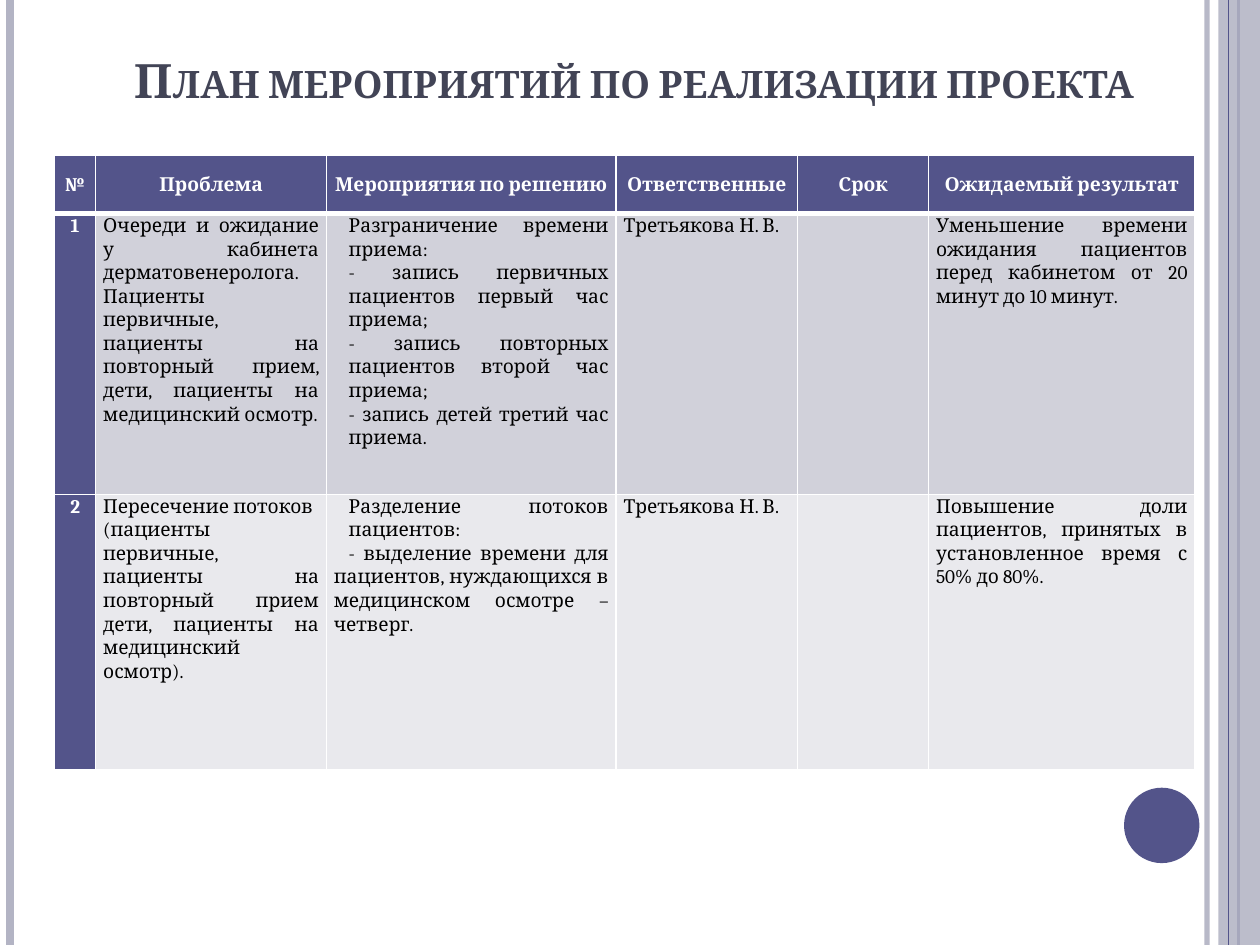
import pptx
import pptx.util
import pptx.dml.color
import pptx.enum.shapes
import pptx.enum.text
import pptx.oxml
import pptx.oxml.ns
import lxml.etree

Cm = pptx.util.Cm
Pt = pptx.util.Pt
RGB = pptx.dml.color.RGBColor
ALIGN = pptx.enum.text.PP_ALIGN
ANCHOR = pptx.enum.text.MSO_ANCHOR
FORM = pptx.enum.shapes.MSO_SHAPE
qn = pptx.oxml.ns.qn

INDIGO = RGB(0x53, 0x54, 0x8A)
LILAC = RGB(0xB3, 0xB4, 0xC4)
SLATE = RGB(0x42, 0x44, 0x56)
BAND = RGB(0xD1, 0xD1, 0xDA)
PALE = RGB(0xE9, 0xE9, 0xED)
WHITE = RGB(0xFF, 0xFF, 0xFF)
BLACK = RGB(0, 0, 0)

WIDE, HIGH = 25.4, 19.05
COLS = [0.83, 4.65, 5.84, 3.66, 2.64, 5.37]
ROWS = [1.19, 5.66, 5.54]
INSET = 0.3

HEAD = ["№", "Проблема", "Мероприятия по решению", "Ответственные",
        "Срок", "Ожидаемый результат"]
# Each body cell is a list of (text, left indent, first-line indent)
BODY = [
    [[("1", 0, 0)],
     [("Очереди и ожидание у кабинета дерматовенеролога.", 0, 0),
      ("Пациенты первичные, пациенты на повторный прием, дети, "
       "пациенты на медицинский осмотр.", 0, 0)],
     [("Разграничение времени приема:", INSET, 0),
      ("- запись первичных пациентов первый час приема;", INSET, 0),
      ("- запись повторных пациентов второй час приема;", INSET, 0),
      ("- запись детей третий час приема.", INSET, 0)],
     [("Третьякова Н. В.", 0, 0)],
     [],
     [("Уменьшение времени ожидания пациентов перед кабинетом "
       "от 20 минут до 10 минут.", 0, 0)]],
    [[("2", 0, 0)],
     [("Пересечение потоков", 0, 0),
      ("(пациенты первичные, пациенты на повторный прием дети, "
       "пациенты на медицинский осмотр).", 0, 0)],
     [("Разделение потоков пациентов:", INSET, 0),
      ("- выделение времени для пациентов, нуждающихся в "
       "медицинском осмотре – четверг.", 0, INSET)],
     [("Третьякова Н. В.", 0, 0)],
     [],
     [("Повышение доли пациентов, принятых в установленное время "
       "с 50% до 80%.", 0, 0)]],
]


def format(item, values):
    for name, value in values.items():
        setattr(item, name, value)


def fade(item, share):
    for tint in item._element.spPr.iter(qn("a:srgbClr")):
        alpha = lxml.etree.SubElement(tint, qn("a:alpha"))
        alpha.set("val", str(share * 1000))


def rule(slide, x, top, high, color, width):
    line = slide.shapes.add_connector(
        pptx.enum.shapes.MSO_CONNECTOR.STRAIGHT,
        Cm(x), Cm(top), Cm(x), Cm(top + high))
    line.line.width = Pt(width)
    line.line.color.rgb = color
    lxml.etree.SubElement(line._element.spPr, qn("a:effectLst"))
    return line


def block(slide, form, box, color):
    shape = slide.shapes.add_shape(form, *map(Cm, box))
    shape.shadow.inherit = False
    shape.fill.solid()
    shape.fill.fore_color.rgb = color
    shape.line.fill.background()
    return shape


def add_frame(slide, box):
    left, top, wide, high = box
    right = left + wide
    # Rules beside the content
    fade(rule(slide, right - 1.07, top, high, LILAC, 3), 93)
    rule(slide, left + 0.2, top, high, LILAC, 4.5)
    # Right strip, veiling one rule and crossed by another
    rule(slide, right - 0.43, top, high, INDIGO, 1.5)
    strip = block(slide, FORM.RECTANGLE, (right - 0.84, top, 0.84, high), LILAC)
    fade(strip, 87)
    rule(slide, right - 0.64, top, high, INDIGO, 0.75)
    # Corner disc
    block(slide, FORM.OVAL, (right - 2.74, top + 15.88, 1.52, 1.52), INDIGO)


def add_title(slide, box):
    title = slide.shapes.title
    format(title, dict(zip(("left", "top", "width", "height"), map(Cm, box))))
    frame = title.text_frame
    format(frame, {"vertical_anchor": ANCHOR.BOTTOM, "word_wrap": True,
                   "auto_size": pptx.enum.text.MSO_AUTO_SIZE.NONE})
    para = frame.paragraphs[0]
    para.alignment = ALIGN.CENTER
    run = para.add_run()
    run.text = "План мероприятий по реализации проекта"
    format(run.font, {"name": "Cambria", "size": Pt(27), "bold": True})
    run.font.color.rgb = SLATE
    run.font._element.set("cap", "small")


def add_edge(cell, side, width):
    line = lxml.etree.SubElement(cell._tc.get_or_add_tcPr(), qn("a:ln" + side))
    line.set("w", str(Pt(width)))
    fill = lxml.etree.SubElement(line, qn("a:solidFill"))
    lxml.etree.SubElement(fill, qn("a:srgbClr")).set("val", str(WHITE))


def fill_cell(cell, paras, fill, strong, edges):
    format(cell, {"margin_left": Cm(0.15), "margin_right": Cm(0.15),
                  "margin_top": 0, "margin_bottom": 0})
    for side, width in edges.items():
        add_edge(cell, side, width)
    cell.fill.solid()
    cell.fill.fore_color.rgb = fill
    frame = cell.text_frame
    for k, (text, indent, first) in enumerate(paras):
        para = frame.paragraphs[0] if k == 0 else frame.add_paragraph()
        format(para, {"alignment": ALIGN.CENTER if strong else ALIGN.JUSTIFY,
                      "line_spacing": 1.06})
        if indent or first:
            props = para._p.get_or_add_pPr()
            props.set("marL", str(Cm(indent)))
            props.set("indent", str(Cm(first)))
        run = para.add_run()
        run.text = text
        format(run.font, {"name": "Cambria", "size": Pt(11), "bold": strong})
        run.font.color.rgb = WHITE if strong else BLACK


def add_plan(slide, box):
    table = slide.shapes.add_table(
        len(ROWS), len(COLS), *map(Cm, box)).table
    for col, wide in zip(table.columns, COLS):
        col.width = Cm(wide)
    for row, high in zip(table.rows, ROWS):
        row.height = Cm(high)
    lines = [[[(text, 0, 0)] for text in HEAD]] + BODY
    for r, line in enumerate(lines):
        edges = {"L": 1, "R": 1, "T": 3 if r == 1 else 1, "B": 3 if r == 0 else 1}
        for c, paras in enumerate(line):
            cell = table.cell(r, c)
            strong = r == 0 or c == 0
            fill = INDIGO if strong else (BAND, PALE)[r - 1]
            fill_cell(cell, paras, fill, strong, edges)
            if r == 0:
                cell.vertical_anchor = ANCHOR.MIDDLE


def main():
    deck = pptx.Presentation()
    format(deck, {"slide_width": Cm(WIDE), "slide_height": Cm(HIGH)})
    slide = deck.slides.add_slide(deck.slide_layouts[5])
    add_frame(slide, (0, 0, WIDE, HIGH))
    add_title(slide, (1.27, 0.76, 23.04, 1.55))
    add_plan(slide, (1.1, 3.12, sum(COLS), sum(ROWS)))
    deck.save("out.pptx")


if __name__ == "__main__":
    main()
